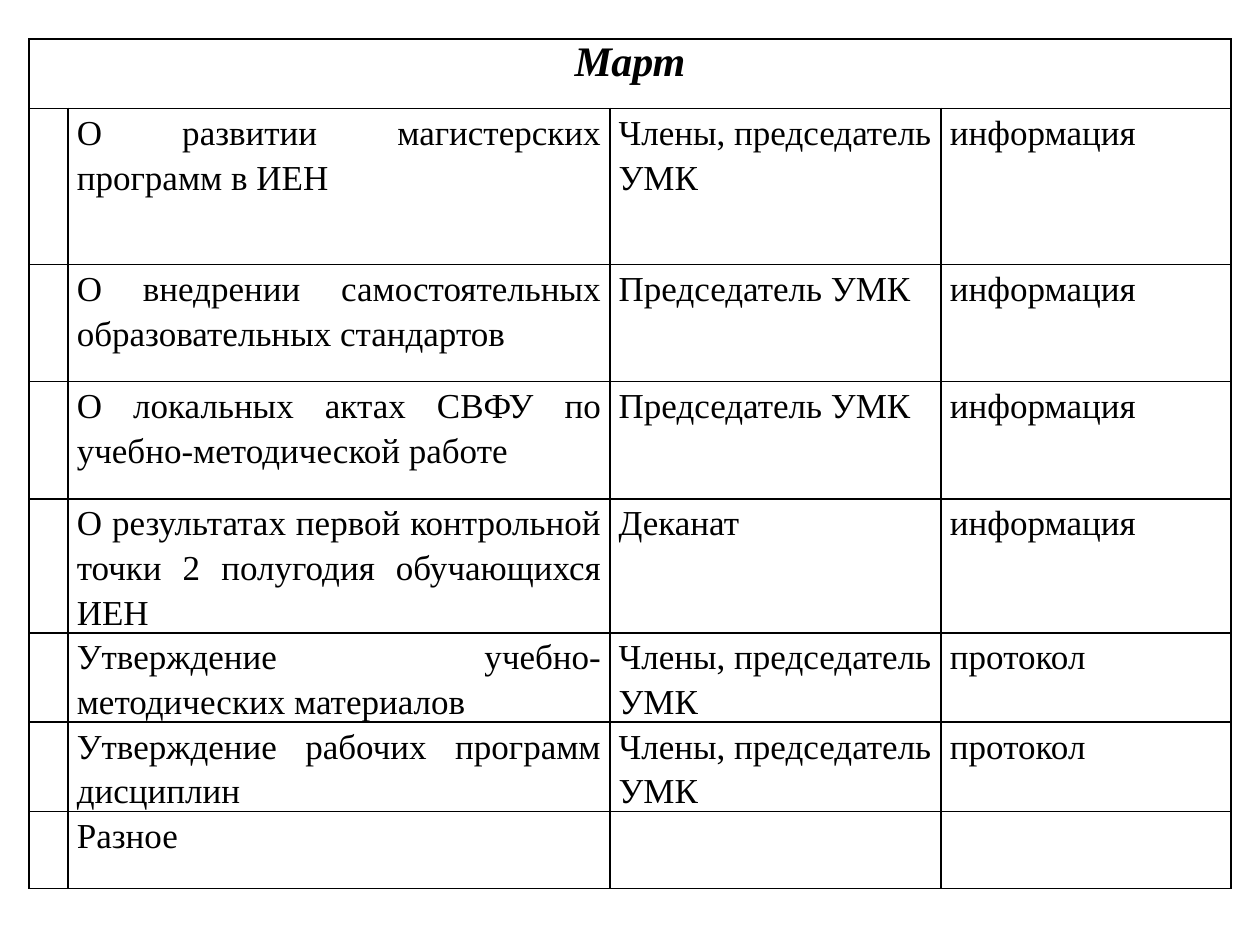
"""Build a slide with the March plan of the methodical commission."""
from lxml import etree
from pptx import Presentation
from pptx.dml.color import RGBColor
from pptx.enum import text
from pptx.oxml import ns
from pptx.util import Inches, Pt

BLACK = RGBColor(0x00, 0x00, 0x00)
FONT = "Times New Roman"
MONTH = "Март"
COLUMN_WIDTHS = [0.31, 4.3, 2.63, 2.3]
ROW_HEIGHTS = [0.55, 1.24, 0.93, 0.93, 0.93, 0.61, 0.61, 0.61]
ALIGNMENTS = [text.PP_ALIGN.JUSTIFY, text.PP_ALIGN.LEFT, text.PP_ALIGN.JUSTIFY]
AGENDA = [
    ("О развитии магистерских программ в ИЕН", "Члены, председатель УМК", "информация"),
    ("О внедрении самостоятельных образовательных стандартов", "Председатель УМК", "информация"),
    ("О локальных актах СВФУ по учебно-методической работе", "Председатель УМК", "информация"),
    ("О результатах первой контрольной точки 2 полугодия обучающихся ИЕН", "Деканат", "информация"),
    ("Утверждение учебно-методических материалов", "Члены, председатель УМК", "протокол"),
    ("Утверждение рабочих программ дисциплин", "Члены, председатель УМК", "протокол"),
    ("Разное", "", ""),
]


def style_cell(cell):
    """Clear the fill of a cell and give it thin black borders."""
    cell.fill.background()
    properties = cell._tc.get_or_add_tcPr()
    for index, side in enumerate(("lnL", "lnR", "lnT", "lnB")):
        line = etree.Element(ns.qn(f"a:{side}"), w=str(Pt(1)))
        fill = etree.SubElement(line, ns.qn("a:solidFill"))
        etree.SubElement(fill, ns.qn("a:srgbClr"), val=str(BLACK))
        properties.insert(index, line)


def write_cell(cell, content, size, alignment, margin, spacing=1.0, emphasis=False):
    """Write one formatted paragraph into a cell."""
    cell.margin_left = cell.margin_right = Inches(margin)
    cell.margin_top = cell.margin_bottom = Inches(0)
    paragraph = cell.text_frame.paragraphs[0]
    paragraph.text = content
    paragraph.alignment = alignment
    paragraph.line_spacing = spacing
    for run in paragraph.runs:
        run.font.name = FONT
        run.font.size = Pt(size)
        run.font.bold = run.font.italic = emphasis
        run.font.color.rgb = BLACK


def add_plan_table(slide):
    """Add the table with the month heading and the agenda rows."""
    frame = slide.shapes.add_table(
        len(ROW_HEIGHTS), len(COLUMN_WIDTHS), Inches(0.23), Inches(0.31),
        Inches(sum(COLUMN_WIDTHS)), Inches(sum(ROW_HEIGHTS)))
    table = frame.table
    table.first_row = table.horz_banding = False
    for column, width in zip(table.columns, COLUMN_WIDTHS):
        column.width = Inches(width)
    for row, height in zip(table.rows, ROW_HEIGHTS):
        row.height = Inches(height)
        for cell in row.cells:
            style_cell(cell)
    heading = table.cell(0, 0)
    heading.merge(table.cell(0, len(COLUMN_WIDTHS) - 1))
    write_cell(heading, MONTH, 24, text.PP_ALIGN.CENTER, 0.05, emphasis=True)
    for row_index, entries in enumerate(AGENDA, start=1):
        for column_index, (content, alignment) in enumerate(zip(entries, ALIGNMENTS), start=1):
            if content:
                write_cell(table.cell(row_index, column_index), content, 20,
                           alignment, 0.07, spacing=1.15)


def main():
    """Create and save the presentation."""
    presentation = Presentation()
    presentation.slide_width = Inches(10)
    presentation.slide_height = Inches(7.5)
    slide = presentation.slides.add_slide(presentation.slide_layouts[6])
    add_plan_table(slide)
    presentation.save("out.pptx")


if __name__ == "__main__":
    main()
